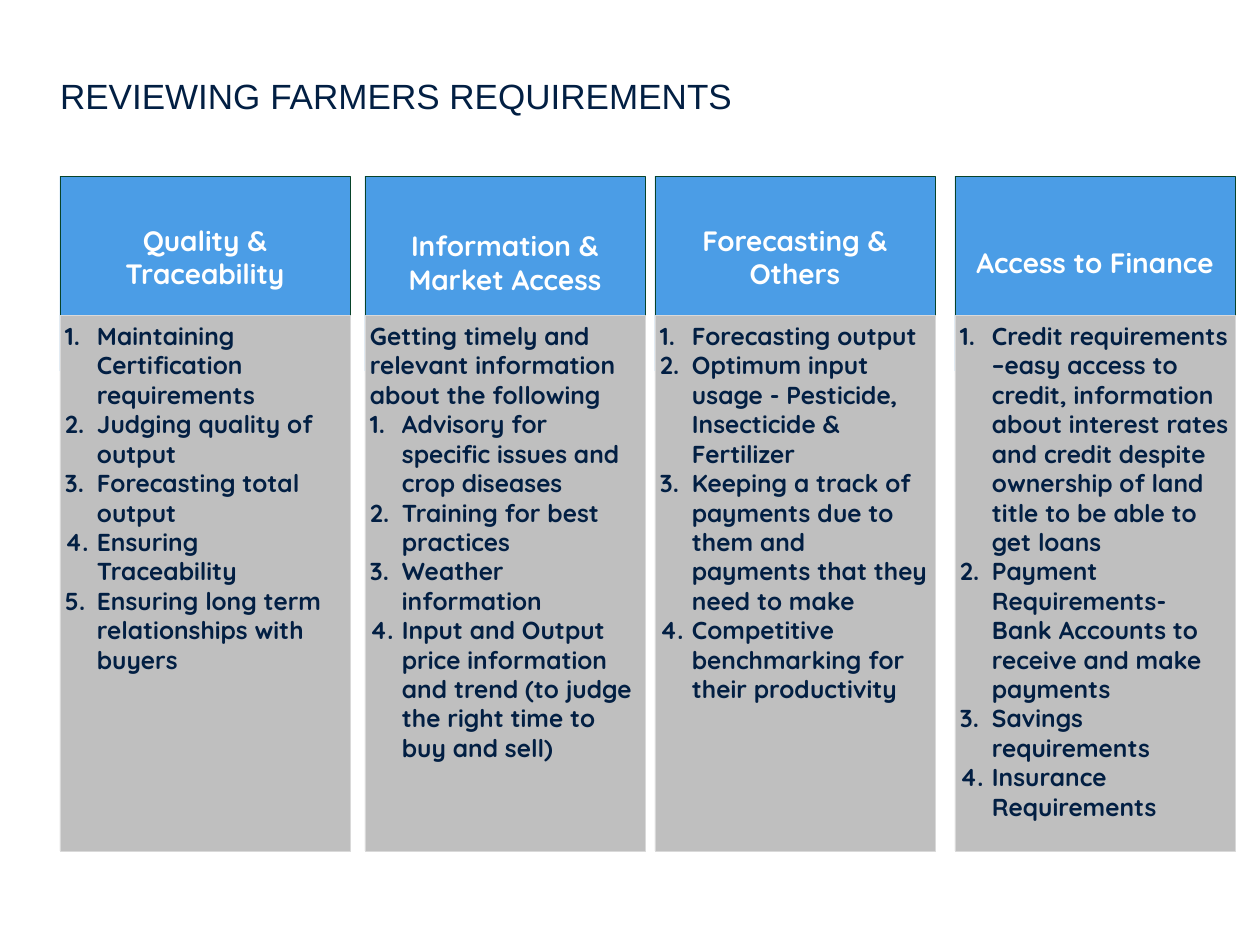
from pptx import Presentation
from pptx.dml.color import RGBColor
from pptx.enum.shapes import MSO_SHAPE
from pptx.enum.text import MSO_ANCHOR, MSO_AUTO_SIZE, PP_ALIGN
from pptx.oxml.ns import qn
from pptx.util import Emu, Inches, Pt
from lxml.etree import SubElement

BLUE = RGBColor(0x4B, 0x9D, 0xE6)
GREEN = RGBColor(0x08, 0x43, 0x29)
GRAY = RGBColor(0xBF, 0xBF, 0xBF)
PALE = RGBColor(0xD9, 0xD9, 0xD9)
NAVY = RGBColor(0x02, 0x1F, 0x43)
WHITE = RGBColor(0xFF, 0xFF, 0xFF)

TOP, HEAD, DROP, BODY = 176, 195, 139, 536
INDENT = 32

# Left, width, lift of the heading, heading, intro, numbered points
COLUMNS = [
    (60, 290, 33, "Quality & Traceability", None, [
        "Maintaining Certification requirements",
        "Judging quality of output",
        "Forecasting total output",
        "Ensuring Traceability",
        "Ensuring long term relationships with buyers"]),
    (365, 280, 22, "Information & Market Access",
     "Getting timely and relevant information about the following", [
         "Advisory for specific issues and crop diseases",
         "Training for best practices",
         "Weather information",
         "Input and Output price information and trend "
         "(to judge the right time to buy and sell)"]),
    (655, 280, 33, "Forecasting & Others", None, [
        "Forecasting output",
        "Optimum input usage - Pesticide, Insecticide & Fertilizer",
        "Keeping a track of payments due to them and payments "
        "that they need to make",
        "Competitive benchmarking for their productivity"]),
    (955, 280, 22, "Access to Finance", None, [
        "Credit requirements –easy access to credit, information about "
        "interest rates and credit despite ownership of land title "
        "to be able to get loans",
        "Payment Requirements- Bank Accounts to receive and make payments",
        "Savings requirements",
        "Insurance Requirements"]),
]


def px(n):
    return Emu(round(n * 914400 / 126))


def style(para, font, size, color, bold, align):
    para.alignment = align
    for run in para.runs:
        run.font.name = font
        run.font.size = Pt(size)
        run.font.color.rgb = color
        run.font.bold = bold


def number(para):
    props = para._p.get_or_add_pPr()
    props.set("marL", str(px(INDENT)))
    props.set("indent", str(-px(INDENT)))
    SubElement(props, qn("a:buFont"), typeface="+mj-lt")
    SubElement(props, qn("a:buAutoNum"), type="arabicPeriod")


def add_panel(slide, box, fill, edge, anchor, lift=0):
    panel = slide.shapes.add_shape(MSO_SHAPE.RECTANGLE, *map(px, box))
    panel.shadow.inherit = False
    panel.fill.solid()
    panel.fill.fore_color.rgb = fill
    panel.line.color.rgb = edge
    panel.line.width = Pt(0.25)
    frame = panel.text_frame
    frame.word_wrap = True
    frame.vertical_anchor = anchor
    frame.margin_left = frame.margin_right = px(5)
    frame.margin_top = px(6)
    frame.margin_bottom = px(6 + lift)
    return frame


def add_title(slide, box, text):
    title = slide.shapes.title
    title.left, title.top, title.width, title.height = map(px, box)
    frame = title.text_frame
    frame.text = text
    frame.word_wrap = True
    frame.auto_size = MSO_AUTO_SIZE.NONE
    frame.vertical_anchor = MSO_ANCHOR.MIDDLE
    frame.margin_left = frame.margin_right = 0
    frame.margin_top = frame.margin_bottom = 0
    style(frame.paragraphs[0], "Arial", 20, NAVY, False, PP_ALIGN.LEFT)


def add_column(slide, left, top, width, lift, heading, intro, points):
    # Heading, partly covered by the list below it
    head = add_panel(slide, (left, top, width, HEAD), BLUE, GREEN,
                     MSO_ANCHOR.MIDDLE, lift)
    head.text = heading
    style(head.paragraphs[0], "Quicksand", 16, WHITE, True, PP_ALIGN.CENTER)

    # Intro and numbered list
    body = add_panel(slide, (left, top + DROP, width, BODY), GRAY, PALE,
                     MSO_ANCHOR.TOP)
    lines = ([intro] if intro else []) + points
    body.text = "\n".join(lines)
    for para, line in zip(body.paragraphs, lines):
        style(para, "Quicksand", 14, NAVY, True, PP_ALIGN.LEFT)
        if line != intro:
            number(para)


def main():
    deck = Presentation()
    deck.slide_width, deck.slide_height = Inches(10), Inches(7.5)
    slide = deck.slides.add_slide(deck.slide_layouts[5])
    add_title(slide, (60, 66, 1152, 60), "REVIEWING FARMERS REQUIREMENTS")
    for left, width, *rest in COLUMNS:
        add_column(slide, left, TOP, width, *rest)
    deck.save("out.pptx")


if __name__ == "__main__":
    main()
